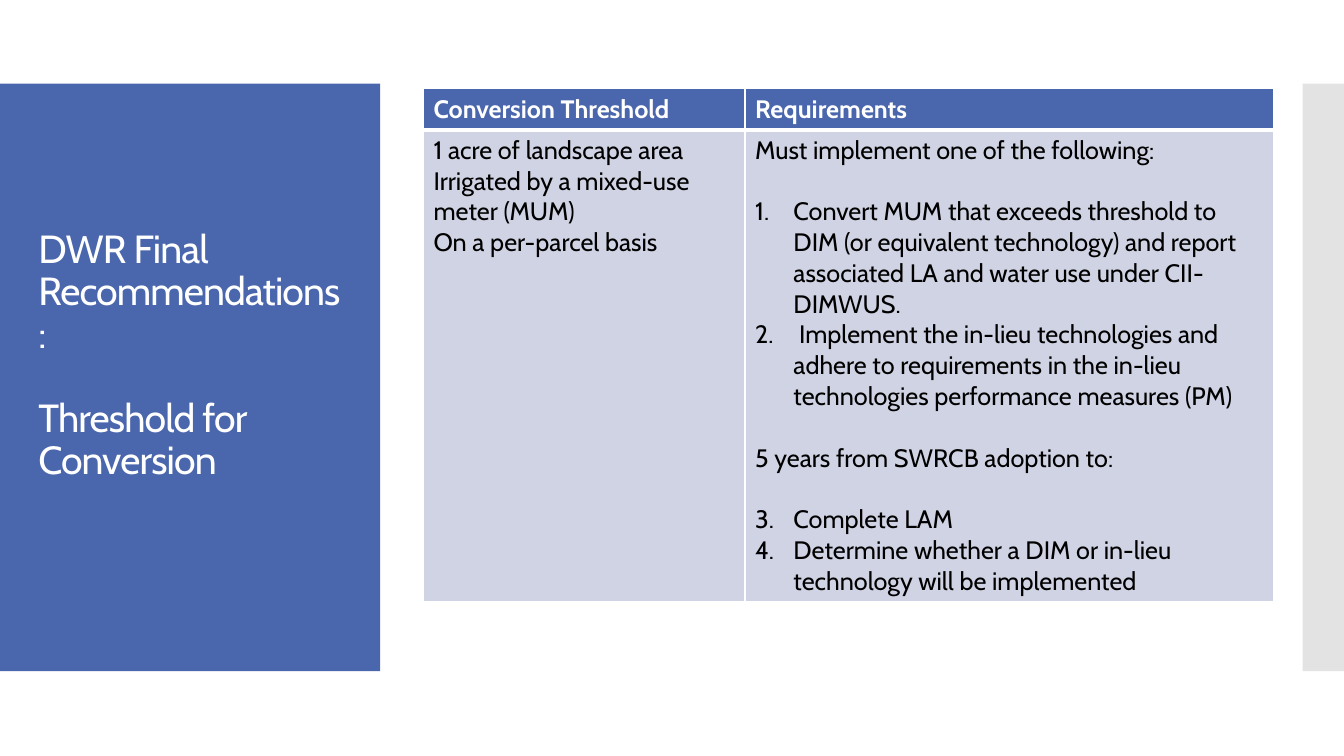
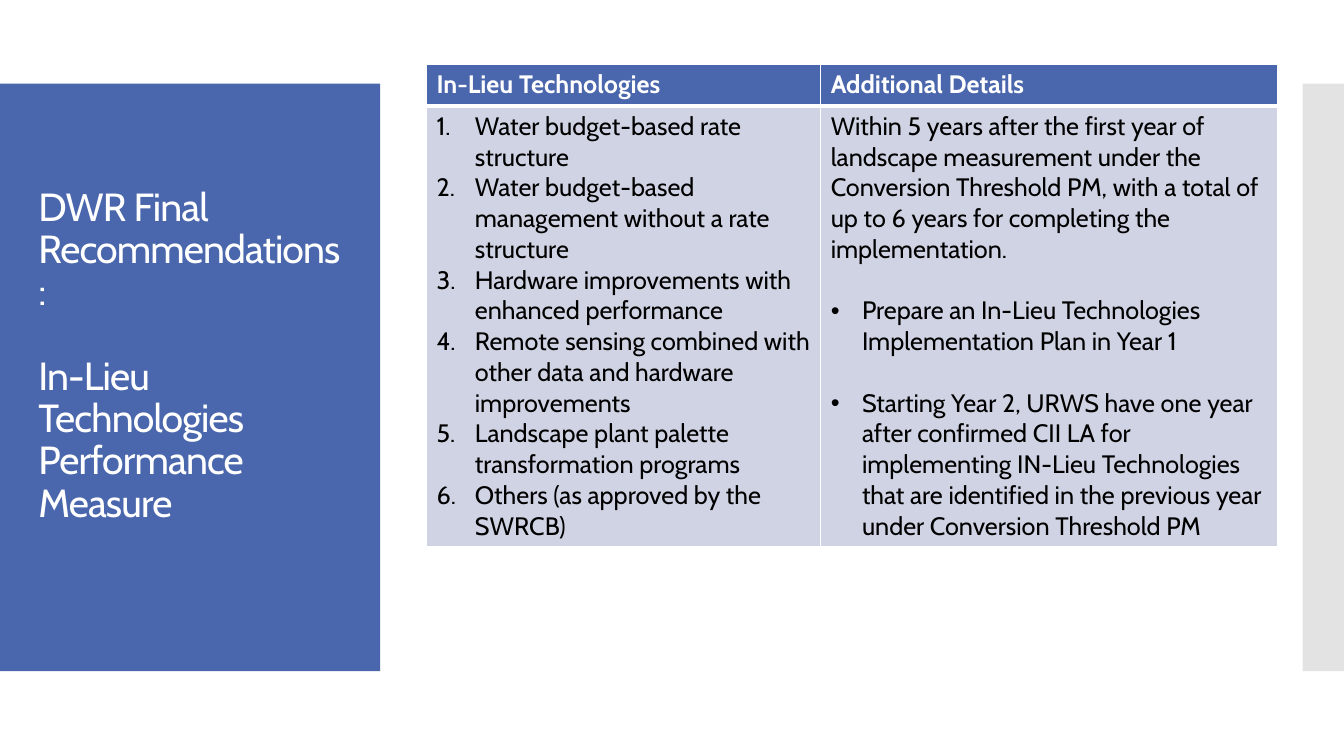
from dataclasses import dataclass

from lxml import etree
from pptx import Presentation
from pptx.dml.color import RGBColor
from pptx.enum.shapes import MSO_SHAPE
from pptx.enum.text import MSO_ANCHOR, MSO_AUTO_SIZE, PP_ALIGN
from pptx.oxml.ns import qn
from pptx.util import Emu, Pt

RECTANGLE = MSO_SHAPE.RECTANGLE
MIDDLE = MSO_ANCHOR.MIDDLE
NO_AUTOFIT = MSO_AUTO_SIZE.NONE
LEFT = PP_ALIGN.LEFT
TITLE_ONLY = 5
EMU_PER_PX = 9144  # 100 px to the inch


def px(length):
    return Emu(length * EMU_PER_PX)


@dataclass(frozen=True)
class Theme:
    font: str = "Cabin"
    blue: str = "4A66AC"
    grey: str = "C8C8C8"
    cell: str = "D0D3E3"
    white: str = "FFFFFF"
    black: str = "000000"
    title_size: int = 28
    title_gap: int = 30
    title_spacing: int = -60  # hundredths of a point
    table_size: int = 18
    table_gap: int = 22
    thin_rule: int = 1
    thick_rule: int = 3


@dataclass(frozen=True)
class Item:
    """One cell paragraph; gap leaves one line free above it."""
    text: str
    gap: bool = False
    bullet: str = ""
    number_from: int = 0


class Deck:
    def __init__(self, theme):
        self.theme = theme
        self.prs = Presentation()
        self.prs.slide_width, self.prs.slide_height = px(1333), px(750)
        self.slide = None

    def new_slide(self, topic):
        layout = self.prs.slide_layouts[TITLE_ONLY]
        self.slide = self.prs.slides.add_slide(layout)
        self.band(0, 377, self.theme.blue)
        self.band(1292, 41, self.theme.grey, opacity=50)
        self.title(["DWR Final", "Recommendations:", topic])

    def band(self, left, width, color, opacity=100):
        """Full-height colour band behind the title."""
        band = self.slide.shapes.add_shape(
            RECTANGLE, px(left), px(83), px(width), px(583))
        band.shadow.inherit = False
        band.line.fill.background()
        band.fill.solid()
        band.fill.fore_color.rgb = RGBColor.from_string(color)
        if opacity < 100:
            tint = band.element.spPr.find(".//" + qn("a:srgbClr"))
            etree.SubElement(tint, qn("a:alpha"), val=str(opacity * 1000))
        self.slide.shapes.title.element.addprevious(band.element)

    def title(self, lines):
        title = self.slide.shapes.title
        title.left, title.top = px(28), px(123)
        title.width, title.height = px(322), px(461)
        frame = title.text_frame
        frame.word_wrap = True
        frame.auto_size = NO_AUTOFIT
        frame.vertical_anchor = MIDDLE
        for index, line in enumerate(lines):
            paragraph = self.paragraph(frame, index)
            paragraph.line_spacing = 0.9
            if index == len(lines) - 1:
                paragraph.space_before = Pt(self.theme.title_gap)
            run = self.run(paragraph, line, self.theme.title_size, self.theme.white)
            run.font._element.set("spc", str(self.theme.title_spacing))

    def paragraph(self, frame, index):
        paragraph = frame.add_paragraph() if index else frame.paragraphs[0]
        paragraph.alignment = LEFT
        paragraph.space_before = Pt(0)
        return paragraph

    def run(self, paragraph, text, size, color, bold=False):
        run = paragraph.add_run()
        run.text = text
        run.font.name = self.theme.font
        run.font.size = Pt(size)
        run.font.bold = bold
        run.font.color.rgb = RGBColor.from_string(color)
        return run

    def table(self, left, top, widths, height, headings, columns):
        """Two-row table: headings above one cell of items per column."""
        header_height = 41
        frame = self.slide.shapes.add_table(
            2, len(widths), px(left), px(top), px(sum(widths)), px(height))
        table = frame.table
        table.horz_banding = False
        table.rows[0].height = px(header_height)
        table.rows[1].height = px(height - header_height)
        theme = self.theme
        for col, (width, heading, items) in enumerate(zip(widths, headings, columns)):
            table.columns[col].width = px(width)
            self.cell(table.cell(0, col), [Item(heading)], theme.blue,
                      theme.white, bold=True, bottom=theme.thick_rule)
            self.cell(table.cell(1, col), items, theme.cell,
                      theme.black, top=theme.thick_rule)

    def cell(self, cell, items, fill, color, bold=False, top=None, bottom=None):
        thin = self.theme.thin_rule
        properties = cell._tc.get_or_add_tcPr()
        sides = {"L": thin, "R": thin, "T": top or thin, "B": bottom or thin}
        for side, points in sides.items():
            rule = etree.SubElement(properties, qn("a:ln" + side), w=str(Pt(points)))
            solid = etree.SubElement(rule, qn("a:solidFill"))
            etree.SubElement(solid, qn("a:srgbClr"), val=self.theme.white)
        cell.fill.solid()
        cell.fill.fore_color.rgb = RGBColor.from_string(fill)
        for index, item in enumerate(items):
            paragraph = self.paragraph(cell.text_frame, index)
            if item.gap:
                paragraph.space_before = Pt(self.theme.table_gap)
            self.marker(paragraph, item)
            self.run(paragraph, item.text, self.theme.table_size, color, bold)

    def marker(self, paragraph, item):
        """Hanging bullet or number."""
        if not (item.bullet or item.number_from):
            return
        properties = paragraph._p.get_or_add_pPr()
        indent = px(31 if item.bullet else 38)
        properties.set("marL", str(indent))
        properties.set("indent", str(-indent))
        if item.bullet:
            etree.SubElement(properties, qn("a:buFont"), typeface="Arial")
            etree.SubElement(properties, qn("a:buChar"), char=item.bullet)
        else:
            number = etree.SubElement(
                properties, qn("a:buAutoNum"), type="arabicPeriod")
            if item.number_from > 1:
                number.set("startAt", str(item.number_from))


def numbered(*texts, start=1, gap=False):
    """Numbered items, with an optional gap above the first."""
    return [Item(text, gap=gap and index == 0, number_from=start)
            for index, text in enumerate(texts)]


def main():
    deck = Deck(Theme())

    # Conversion threshold
    deck.new_slide("Threshold for Conversion")
    threshold = [
        Item("1 acre of landscape area"),
        Item("Irrigated by a mixed-use meter (MUM)"),
        Item("On a per-parcel basis"),
    ]
    requirements = [
        Item("Must implement one of the following:"),
        *numbered(
            "Convert MUM that exceeds threshold to DIM (or equivalent technology) "
            "and report associated LA and water use under CII-DIMWUS.",
            " Implement the in-lieu technologies and adhere to requirements in "
            "the in-lieu technologies performance measures (PM)",
            gap=True),
        Item("5 years from SWRCB adoption to:", gap=True),
        *numbered(
            "Complete LAM",
            "Determine whether a DIM or in-lieu technology will be implemented",
            start=3, gap=True),
    ]
    deck.table(420, 88, [319, 524], 501,
               ["Conversion Threshold", "Requirements"],
               [threshold, requirements])

    # In-lieu technologies
    deck.new_slide("In-Lieu Technologies Performance Measure")
    technologies = numbered(
        "Water budget-based rate structure",
        "Water budget-based management without a rate structure",
        "Hardware improvements with enhanced performance",
        "Remote sensing combined with other data and hardware improvements",
        "Landscape plant palette transformation programs",
        "Others (as approved by the SWRCB)")
    details = [
        Item("Within 5 years after the first year of landscape measurement under "
             "the Conversion Threshold PM, with a total of up to 6 years for "
             "completing the implementation."),
        Item("Prepare an In-Lieu Technologies Implementation Plan in Year 1",
             gap=True, bullet="•"),
        Item("Starting Year 2, URWS have one year after confirmed CII LA for "
             "implementing IN-Lieu Technologies that are identified in the "
             "previous year under Conversion Threshold PM",
             gap=True, bullet="•"),
    ]
    deck.table(423, 64, [391, 453], 471,
               ["In-Lieu Technologies", "Additional Details"],
               [technologies, details])

    deck.prs.save("out.pptx")


if __name__ == "__main__":
    main()
